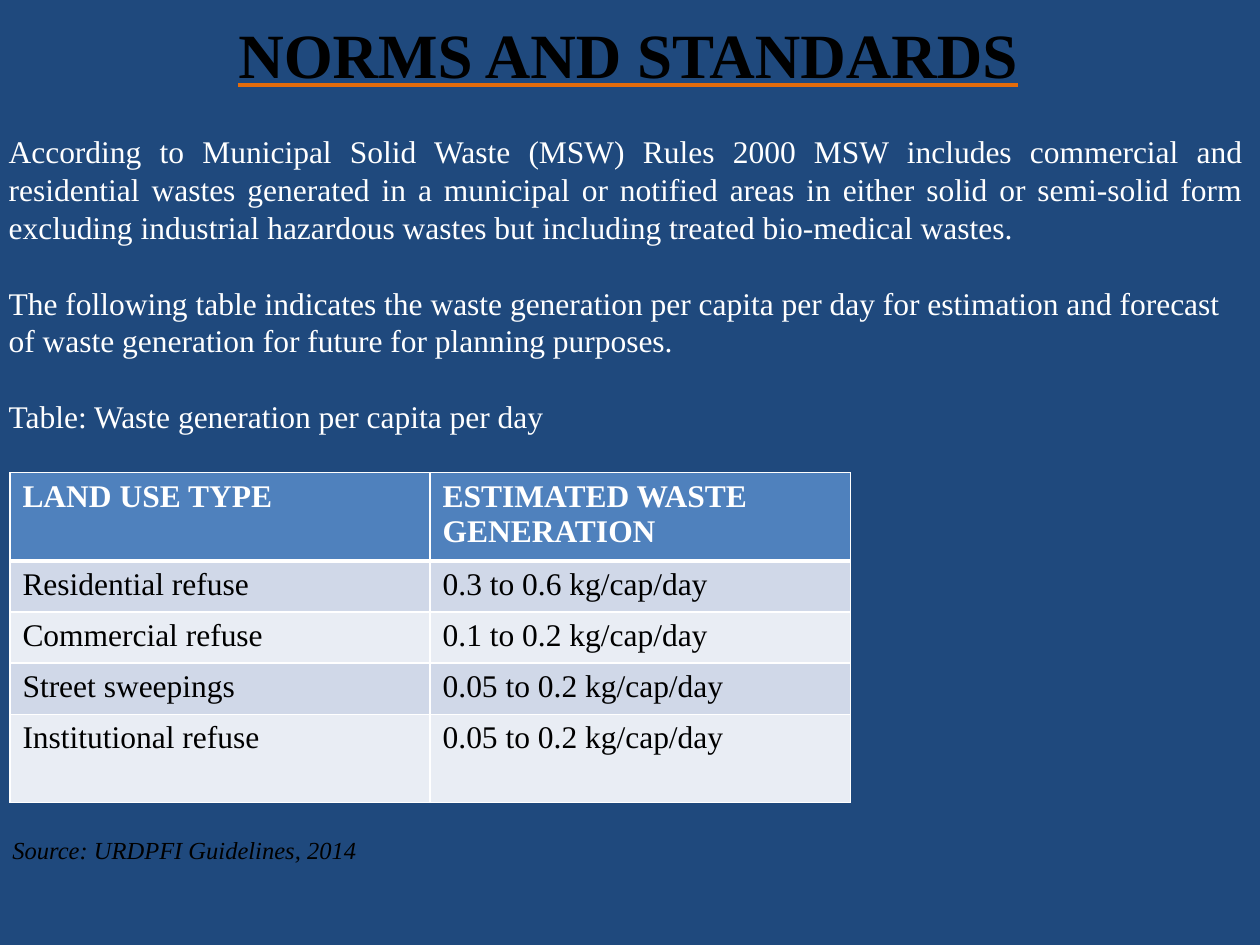
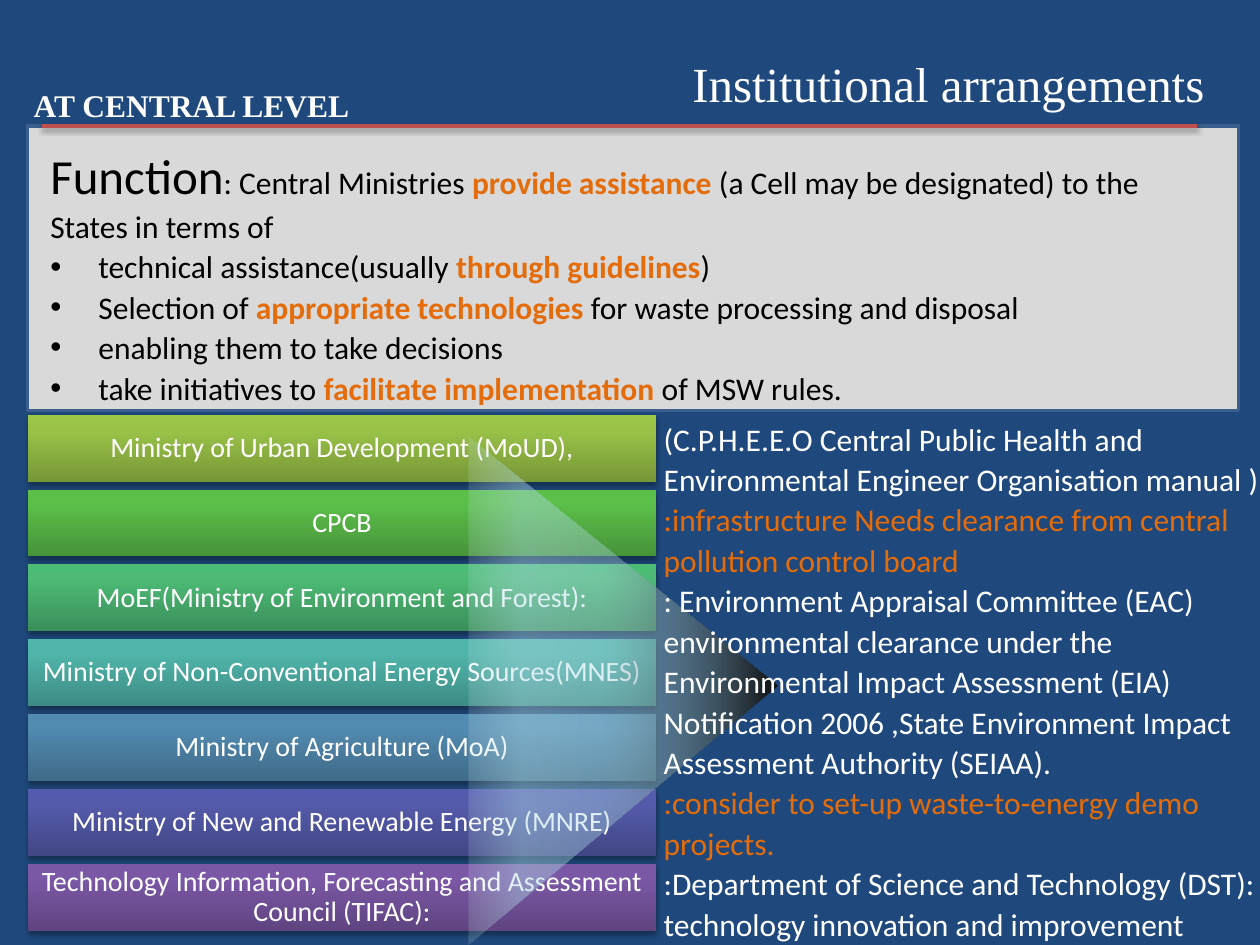
"""Build two slides on norms and institutions for municipal solid waste."""
from lxml import etree
from pptx import Presentation
from pptx.dml.color import RGBColor
from pptx.enum import shapes, text
from pptx.oxml import ns
from pptx.util import Cm, Pt

HUES = {
    "navy": "1F497D", "white": "FFFFFF", "black": "000000", "orange": "E46C0A",
    "head": "4F81BD", "odd": "D0D8E8", "even": "E9EDF4",
    "grey": "D9D9D9", "edge": "3A5F8C", "red": "C0504D",
}
SERIF, SANS = "Times New Roman", "Calibri"

LOOKS = {
    "banner": dict(name=SERIF, size=Pt(36), bold=True, underline=True, color="black"),
    "title": dict(name=SERIF, size=Pt(28), color="white"),
    "label": dict(name=SERIF, size=Pt(18), bold=True, color="white"),
    "prose": dict(name=SERIF, size=Pt(18), color="white"),
    "cell": dict(name=SERIF, size=Pt(18), color="black"),
    "source": dict(name=SERIF, size=Pt(14), italic=True, color="black"),
    "list": dict(name=SANS, size=Pt(18), color="black"),
    "key": dict(name=SANS, size=Pt(18), bold=True, color="orange"),
    "lead": dict(name=SANS, size=Pt(28), color="black"),
    "bar": dict(name=SANS, size=Pt(16), color="white"),
    "note": dict(name=SANS, size=Pt(18), color="white"),
    "alert": dict(name=SANS, size=Pt(18), color="orange"),
}
LEFT, MID, FULL = text.PP_ALIGN.LEFT, text.PP_ALIGN.CENTER, text.PP_ALIGN.JUSTIFY
TIGHT = dict(space_before=Pt(0), line_spacing=1.07)
LINE = Pt(21.6)

NORMS = [
    ("According to Municipal Solid Waste (MSW) Rules 2000 MSW includes commercial and "
     "residential wastes generated in a municipal or notified areas in either solid or "
     "semi-solid form excluding industrial hazardous wastes but including treated "
     "bio-medical wastes.", FULL, 0),
    ("The following table indicates the waste generation per capita per day for "
     "estimation and forecast", LEFT, LINE),
    ("of waste generation for future for planning purposes.", LEFT, 0),
    ("Table: Waste generation per capita per day", LEFT, LINE),
]
RATES = [
    ("LAND USE TYPE", "ESTIMATED WASTE GENERATION"),
    ("Residential refuse", "0.3 to 0.6 kg/cap/day"),
    ("Commercial refuse", "0.1 to 0.2 kg/cap/day"),
    ("Street sweepings", "0.05 to 0.2 kg/cap/day"),
    ("Institutional refuse", "0.05 to 0.2 kg/cap/day"),
]
DUTIES = [
    [("Function", "lead"), (": Central Ministries ", "list"),
     ("provide assistance ", "key"),
     ("(a Cell may be designated) to the States in terms of", "list")],
    [("technical assistance(usually ", "list"), ("through guidelines", "key"),
     (")", "list")],
    [("Selection of ", "list"), ("appropriate technologies ", "key"),
     ("for waste processing and disposal", "list")],
    [("enabling them to take decisions", "list")],
    [("take initiatives to ", "list"), ("facilitate implementation ", "key"),
     ("of MSW rules.", "list")],
]
BODIES = [
    ("Ministry of Urban Development (MoUD),", "779737", "9BC348", "9DC746"),
    ("CPCB", "479339", "5CBF4A", "5BC249"),
    ("MoEF(Ministry of Environment and Forest):", "3B8F5A", "4DBA75", "4BBD75"),
    ("Ministry of Non-Conventional Energy Sources(MNES)", "3D8B83", "50B5AA", "4EB8AC"),
    ("Ministry of Agriculture (MoA)", "3F6A88", "528AB0", "518BB3"),
    ("Ministry of New and Renewable Energy (MNRE)", "414684", "555BAB", "545AAE"),
    ("Technology Information, Forecasting and Assessment Council (TIFAC):",
     "5F4480", "7B58A6", "7C57A8"),
]
NOTES = [
    ("(C.P.H.E.E.O Central Public Health and Environmental Engineer Organisation "
     "manual )", "note"),
    (":infrastructure Needs clearance from central pollution control board", "alert"),
    (": Environment Appraisal Committee (EAC) environmental clearance under the "
     "Environmental Impact Assessment (EIA) Notification 2006 ,State Environment Impact "
     "Assessment Authority (SEIAA).", "note"),
    (":consider to set-up waste-to-energy demo projects.", "alert"),
    (":Department of Science and Technology (DST): technology innovation and "
     "improvement", "note"),
]
CONE = [(0, "0D0D0D", 100), (57, "AEDAE5", 37), (83, "AEDAE5", 44), (100, "C9E6EE", 16)]


def rgb(hue):
    return RGBColor.from_string(HUES[hue])


def node(top, tag, **attrs):
    return etree.SubElement(top, ns.qn(tag), {k: str(v) for k, v in attrs.items()})


def apply(item, form):
    for key, val in form.items():
        setattr(item, key, val)


def put(para, words, look):
    run = para.add_run()
    run.text = words
    form = dict(LOOKS[look])
    run.font.color.rgb = rgb(form.pop("color"))
    apply(run.font, form)
    return run


def place(shape, *box):
    apply(shape, dict(zip(("left", "top", "width", "height"), map(Cm, box))))
    return shape


def write(frame, paras, form, mark=0):
    """Fill a frame with lists of (words, look); bullets start at mark."""
    for i, runs in enumerate(paras):
        para = frame.paragraphs[0] if i == 0 else frame.add_paragraph()
        apply(para, form)
        for words, look in runs:
            put(para, words, look)
        props = para._p.get_or_add_pPr()
        pad = Cm(0.97) if mark and i >= mark else 0
        props.set("marL", str(pad))
        props.set("indent", str(-pad))
        if not pad:
            node(props, "a:buNone")
    apply(frame, dict(auto_size=text.MSO_AUTO_SIZE.NONE, word_wrap=True))
    return frame


def label(slide, box, paras, form):
    return write(slide.shapes.add_textbox(*map(Cm, box)).text_frame, paras, form)


def shade(shape, dist=None):
    effect = node(shape.element.spPr, "a:effectLst")
    if dist:
        cast = node(effect, "a:outerShdw", blurRad=Pt(3.1), dist=Pt(dist),
                    dir=5400000, rotWithShape=0)
        node(node(cast, "a:srgbClr", val=HUES["black"]), "a:alpha", val=36000)


def blend(shape, stops, angle):
    shape.line.fill.background()
    props = shape.element.spPr
    grad = node(props, "a:gradFill", rotWithShape=1)
    row = node(grad, "a:gsLst")
    for pos, hue, solid in stops:
        stop = node(node(row, "a:gs", pos=pos * 1000), "a:srgbClr", val=hue)
        if solid < 100:
            node(stop, "a:alpha", val=solid * 1000)
    node(grad, "a:lin", ang=angle * 60000, scaled=0)
    props.find(ns.qn("a:ln")).addprevious(grad)


def edge(cell, **sides):
    props = cell._tc.get_or_add_tcPr()
    for side in "LRTB":
        line = node(props, "a:ln" + side, w=Pt(sides.get(side, 1)))
        node(node(line, "a:solidFill"), "a:srgbClr", val=HUES["white"])


def rates(slide):
    high, low = 1.78, 1.03
    tall = [high, low, low, low, high]
    grid = slide.shapes.add_table(len(RATES), 2, Cm(0.2), Cm(9.53), Cm(16.94),
                                  Cm(sum(tall))).table
    for r, row in enumerate(RATES):
        grid.rows[r].height = Cm(tall[r])
        for c, words in enumerate(row):
            cell = grid.cell(r, c)
            edge(cell, T=3 if r == 1 else 1, B=3 if r == 0 else 1)
            cell.fill.solid()
            cell.fill.fore_color.rgb = rgb(("even", "odd")[r % 2] if r else "head")
            put(cell.text_frame.paragraphs[0], words, "cell" if r else "label")


def norms(deck):
    slide = deck.slides.add_slide(deck.slide_layouts[1])
    title, body = slide.placeholders
    place(title, -0.08, 0.05, 25.48, 2.03)
    write(title.text_frame, [[("NORMS AND STANDARDS", "banner")]], dict(alignment=MID))
    props = title.text_frame.paragraphs[0].runs[0].font._element
    under = node(props, "a:uFill")
    node(node(under, "a:solidFill"), "a:srgbClr", val=HUES["orange"])
    props.find(ns.qn("a:solidFill")).addnext(under)

    place(body, -0.08, 2.54, 25.4, 6.4)
    write(body.text_frame, [[(words, "prose")] for words, *_ in NORMS],
          dict(line_spacing=LINE))
    for para, (_, side, gap) in zip(body.text_frame.paragraphs, NORMS):
        apply(para, dict(alignment=side, space_before=Pt(0) if not gap else gap))
    rates(slide)
    label(slide, (0, 16.71, 25.4, 0.86),
          [[("Source: URDPFI Guidelines, 2014", "source")]], {})


def central(deck):
    slide = deck.slides.add_slide(deck.slide_layouts[1])
    title, body = slide.placeholders
    add = slide.shapes.add_shape
    kind = shapes.MSO_SHAPE

    panel = place(add(kind.RECTANGLE, 0, 0, 0, 0), 0.56, 2.54, 24.41, 5.74)
    panel.fill.solid()
    panel.fill.fore_color.rgb = rgb("grey")
    panel.line.color.rgb = rgb("edge")
    panel.line.width = Pt(2)
    panel.shadow.inherit = False
    title.element.addprevious(panel.element)

    place(title, 7.37, 0.94, 23.5, 1.45)
    write(title.text_frame, [[("Institutional arrangements", "title")]],
          dict(alignment=MID))
    title.text_frame.vertical_anchor = text.MSO_ANCHOR.BOTTOM
    rule = slide.shapes.add_connector(shapes.MSO_CONNECTOR.STRAIGHT,
                                      Cm(0.84), Cm(2.54), Cm(24.13), Cm(2.54))
    rule.line.color.rgb = rgb("red")
    rule.line.width = Pt(2)
    shade(rule, 1.6)
    place(body, 0.76, 2.72, 24.03, 6.48)
    write(body.text_frame, DUTIES, TIGHT, mark=1)
    label(slide, (0.43, 1.55, 6.93, 1.09), [[("AT CENTRAL LEVEL", "label")]], TIGHT)

    for i, (words, dark, mid, light) in enumerate(BODIES):
        bar = place(add(kind.RECTANGLE, 0, 0, 0, 0), 0.56, 8.36 + 1.51 * i, 12.67, 1.35)
        blend(bar, [(0, dark, 100), (80, mid, 100), (100, light, 100)], 270)
        shade(bar, 1.8)
        frame = write(bar.text_frame, [[(words, "bar")]],
                      dict(alignment=MID, line_spacing=0.9))
        apply(frame, dict.fromkeys(("margin_left", "margin_right", "margin_top",
                                    "margin_bottom"), Cm(0.1)))
        frame.vertical_anchor = text.MSO_ANCHOR.MIDDLE

    cone = place(add(kind.ISOSCELES_TRIANGLE, 0, 0, 0, 0), 7.44, 10.82, 10.24, 6.22)
    cone.adjustments[0] = 0.49
    cone.rotation = 90
    blend(cone, CONE, 90)
    shade(cone)
    label(slide, (13.13, 8.28, 12.73, 11.79), [[note] for note in NOTES], TIGHT)


def main():
    deck = Presentation()
    apply(deck, dict(slide_width=Cm(25.4), slide_height=Cm(19.05)))
    back = deck.slide_master.background.fill
    back.solid()
    back.fore_color.rgb = rgb("navy")
    norms(deck)
    central(deck)
    deck.save("out.pptx")


if __name__ == "__main__":
    main()
